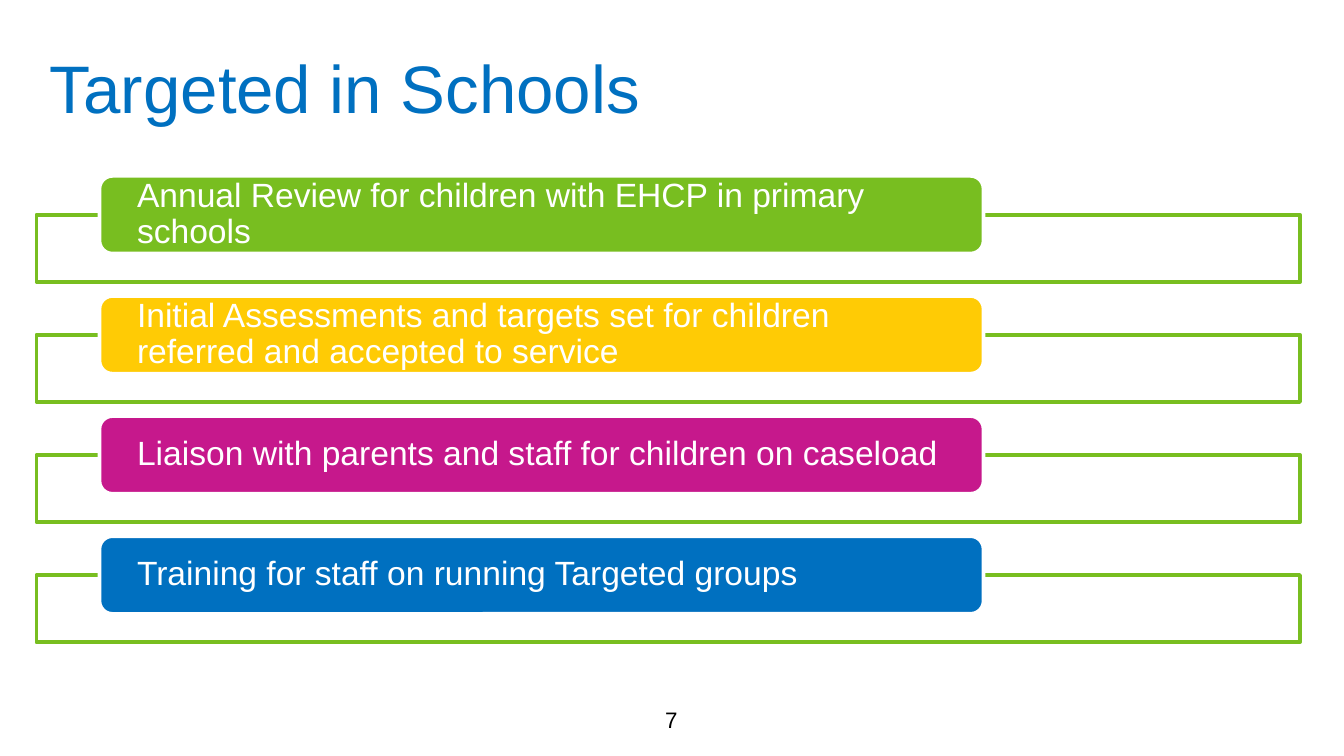
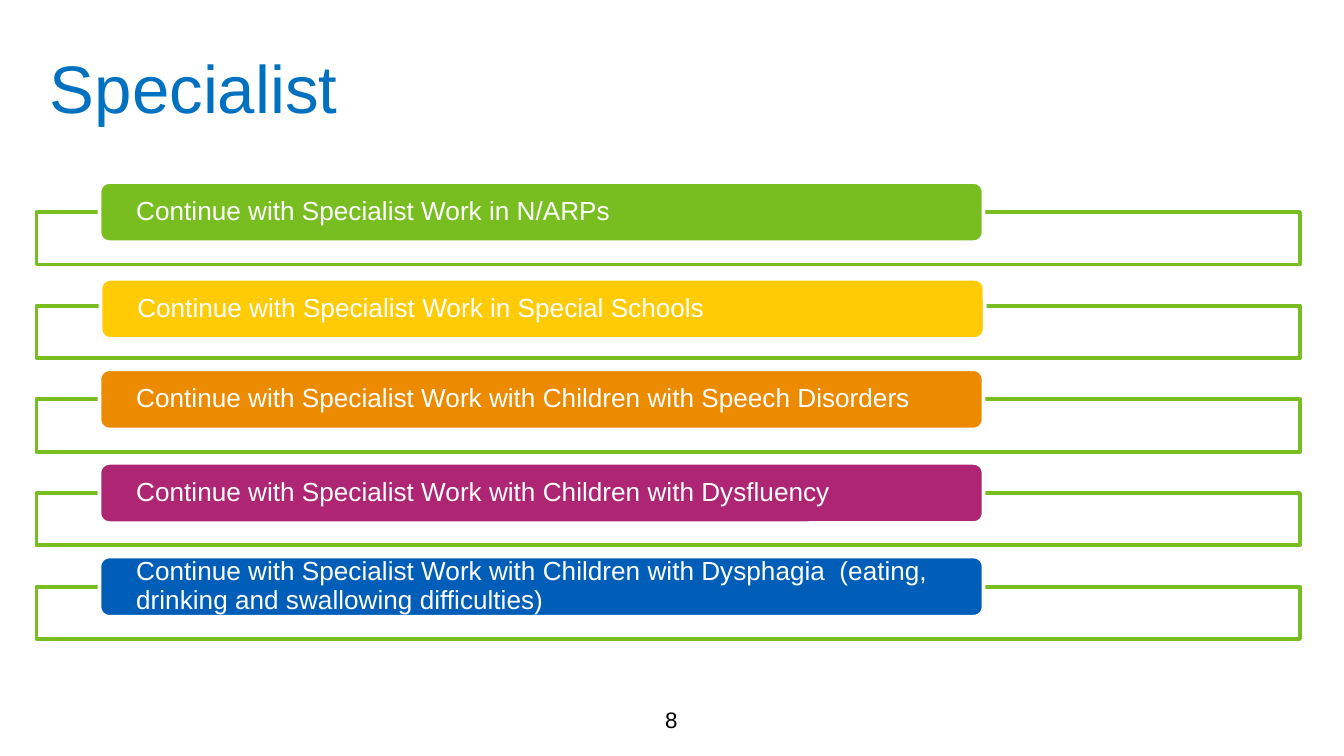
"""Build two slides that list speech therapy work as coloured pills on outlined frames."""
from lxml import etree
from pptx import Presentation
from pptx import util as u
from pptx.dml.color import RGBColor
from pptx.enum import shapes, text
from pptx.oxml.ns import qn

GREEN, YELLOW, BLUE, WHITE, BLACK = "78BE20", "FFCB05", "0070C0", "FFFFFF", "000000"
FRAME_LEFT, FRAME_WIDTH = 0.69, 23.88
PILL_LEFT, PILL_WIDTH = 1.88, 16.71
STRAIGHT = (0, 0)

PILL_TEXT = {"margin_left": u.Cm(0.64), "margin_right": u.Cm(0.64),
             "margin_top": 0, "margin_bottom": 0,
             "vertical_anchor": text.MSO_ANCHOR.MIDDLE}
TITLE_TEXT = {"vertical_anchor": text.MSO_ANCHOR.TOP}
NUMBER_TEXT = {"vertical_anchor": text.MSO_ANCHOR.MIDDLE}

PAGES = [
    {"title": "Targeted in Schools", "top": 4.06, "pitch": 2.27,
     "frame": 1.27, "pill": 1.47, "size": 18,
     "items": [
         ("Annual Review for children with EHCP in primary schools", GREEN, STRAIGHT),
         ("Initial Assessments and targets set for children referred and accepted to service",
          YELLOW, STRAIGHT),
         ("Liaison with parents and staff for children on caseload", "C6188C", STRAIGHT),
         ("Training for staff on running Targeted groups", BLUE, STRAIGHT)]},
    {"title": "Specialist", "top": 4.01, "pitch": 1.77,
     "frame": 0.99, "pill": 1.14, "size": 14,
     "items": [
         ("Continue with Specialist Work in N/ARPs", GREEN, STRAIGHT),
         ("Continue with Specialist Work in Special Schools", YELLOW, (0.02, 0.06)),
         ("Continue with Specialist Work with Children with Speech Disorders",
          "ED8B00", STRAIGHT),
         ("Continue with Specialist Work with Children with Dysphagia  "
          "(eating, drinking and swallowing difficulties)", "005EB8", STRAIGHT)]},
]
PAGES[1]["items"].insert(
    3, ("Continue with Specialist Work with Children with Dysfluency", "AE2573", STRAIGHT))


def write(box, words, size, colour, align, frame_format):
    frame = box.text_frame
    frame.word_wrap = True
    frame.auto_size = text.MSO_AUTO_SIZE.NONE
    for name, value in frame_format.items():
        setattr(frame, name, value)
    para = frame.paragraphs[0]
    para.alignment = align
    span = para.add_run()
    span.text = words
    for name, value in {"name": "Arial", "size": u.Pt(size)}.items():
        setattr(span.font, name, value)
    span.font.color.rgb = RGBColor.from_string(colour)
    return para


def draw(page, kind, left, top, width, height, fill, line):
    box = page.shapes.add_shape(kind, u.Cm(left), u.Cm(top), u.Cm(width), u.Cm(height))
    box.shadow.inherit = False
    box.fill.solid()
    box.fill.fore_color.rgb = RGBColor.from_string(fill)
    box.line.color.rgb = RGBColor.from_string(line)
    box.line.width = u.Pt(2)
    return box


deck = Presentation()
deck.slide_width, deck.slide_height = u.Cm(25.4), u.Cm(14.29)

for number, plan in enumerate(PAGES, start=7):
    page = deck.slides.add_slide(deck.slide_layouts[5])
    title = page.shapes.title
    title.left, title.top, title.width, title.height = (
        u.Cm(0.69), u.Cm(0.74), u.Cm(18.67), u.Cm(1.7))
    write(title, plan["title"], 36, BLUE, text.PP_ALIGN.LEFT, TITLE_TEXT)

    for row, (words, colour, (shift, drop)) in enumerate(plan["items"]):
        top = plan["top"] + row * plan["pitch"]
        frame = draw(page, shapes.MSO_SHAPE.RECTANGLE, FRAME_LEFT, top,
                     FRAME_WIDTH, plan["frame"], WHITE, GREEN)
        tint = frame.fill._xPr.find(qn("a:solidFill"))[0]
        etree.SubElement(tint, qn("a:alpha")).set("val", "90000")

        pill = draw(page, shapes.MSO_SHAPE.ROUNDED_RECTANGLE, PILL_LEFT + shift,
                    top - plan["pill"] / 2 + drop, PILL_WIDTH, plan["pill"], colour, WHITE)
        para = write(pill, words, plan["size"], WHITE, text.PP_ALIGN.LEFT, PILL_TEXT)
        para.line_spacing = 0.9

    box = page.shapes.add_textbox(u.Cm(9.73), u.Cm(13.23), u.Cm(5.92), u.Cm(0.76))
    write(box, str(number), 12, BLACK, text.PP_ALIGN.CENTER, NUMBER_TEXT)

deck.save("out.pptx")
